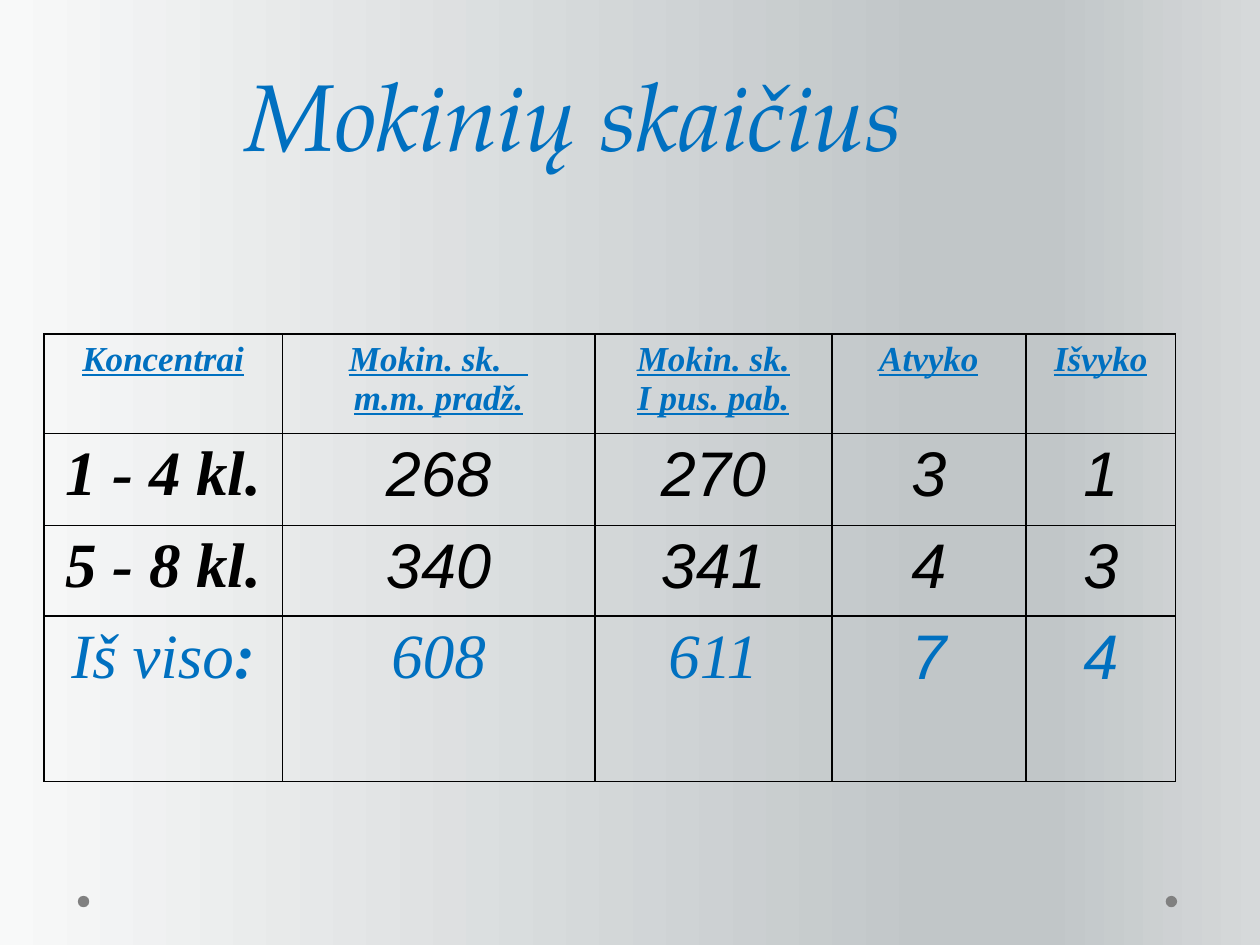
from copy import deepcopy
from dataclasses import dataclass

from lxml import etree
from pptx import Presentation
from pptx.dml.color import RGBColor
from pptx.enum import shapes, text
from pptx.oxml import ns
from pptx.util import Cm, Pt

BLUE = RGBColor(0x00, 0x70, 0xC0)
BLACK = RGBColor(0x00, 0x00, 0x00)
GREY = RGBColor(0x80, 0x80, 0x80)
BACKGROUND_STOPS = [
    (0, RGBColor(0xF8, 0xF9, 0xF9)),
    (0.74, RGBColor(0xC1, 0xC6, 0xC8)),
    (0.83, RGBColor(0xC1, 0xC6, 0xC8)),
    (1, RGBColor(0xD6, 0xD9, 0xDA)),
]
SERIF, SANS, TITLE_FONT = "Times New Roman", "Arial", "TeX Gyre Pagella"


@dataclass(frozen=True)
class Style:
    size: int
    font: str
    color: RGBColor
    bold: bool = False
    underline: bool = False


HEADING = Style(20, SERIF, BLUE, bold=True, underline=True)
GRADES = Style(36, SERIF, BLACK, bold=True)
COUNT = Style(36, SANS, BLACK)
TOTAL = Style(36, SERIF, BLUE)
TOTAL_COLON = Style(36, SERIF, BLUE, bold=True)
TOTAL_MOVES = Style(36, SANS, BLUE)

COLUMN_WIDTHS = [Cm(4.8), Cm(6.3), Cm(4.78), Cm(3.91), Cm(3.02)]
ROW_HEIGHTS = [Cm(2.01), Cm(1.85), Cm(1.83), Cm(3.33)]
COUNT_ROW_STYLES = [GRADES] + [COUNT] * 4
ROWS = [
    (["Koncentrai", "Mokin. sk.   \nm.m. pradž.", "Mokin. sk.\nI pus. pab.",
      "Atvyko", "Išvyko"], [HEADING] * 5),
    (["1 - 4 kl.", "268", "270", "3", "1"], COUNT_ROW_STYLES),
    (["5 - 8 kl.", "340", "341", "4", "3"], COUNT_ROW_STYLES),
    (["Iš viso", "608", "611", "7", "4"], [TOTAL] * 3 + [TOTAL_MOVES] * 2),
]


def add_run(paragraph, wording: str, *, style: Style) -> None:
    run = paragraph.add_run()
    run.text = wording
    run.font.size = Pt(style.size)
    run.font.name = style.font
    run.font.color.rgb = style.color
    run.font.bold = style.bold
    run.font.italic = True
    run.font.underline = style.underline


def write(frame, wording: str, *, style: Style, line_spacing=None) -> None:
    """Write centred paragraphs, one for each line of the wording."""
    for index, line in enumerate(wording.split("\n")):
        paragraph = frame.add_paragraph() if index else frame.paragraphs[0]
        paragraph.alignment = text.PP_ALIGN.CENTER
        if line_spacing is not None:
            paragraph.line_spacing = line_spacing
        add_run(paragraph, line, style=style)


def outline_cell(cell) -> None:
    """Give a cell thin black borders and no fill."""
    properties = cell._tc.get_or_add_tcPr()
    for side in ("a:lnL", "a:lnR", "a:lnT", "a:lnB"):
        border = etree.SubElement(properties, ns.qn(side), w=str(Pt(1)))
        fill = etree.SubElement(border, ns.qn("a:solidFill"))
        etree.SubElement(fill, ns.qn("a:srgbClr"), val=str(BLACK))
    cell.fill.background()


def paint_background(slide) -> None:
    fill = slide.background.fill
    fill.gradient()
    fill.gradient_angle = 0
    stop_list = slide.background._cSld.find(".//" + ns.qn("a:gsLst"))
    while len(stop_list) < len(BACKGROUND_STOPS):
        stop_list.append(deepcopy(stop_list[0]))
    for stop, (position, color) in zip(fill.gradient_stops, BACKGROUND_STOPS):
        stop.position = position
        stop.color.rgb = color


def add_dot(slide, left: Cm) -> None:
    dot = slide.shapes.add_shape(
        shapes.MSO_SHAPE.OVAL, left, Cm(18.06), Cm(0.23), Cm(0.23))
    dot.shadow.inherit = False
    dot.fill.solid()
    dot.fill.fore_color.rgb = GREY
    dot.line.fill.background()


def add_title(slide) -> None:
    title = slide.shapes.title
    title.left, title.top = Cm(1.09), Cm(-0.48)
    title.width, title.height = Cm(20.96), Cm(4.04)
    frame = title.text_frame
    frame.auto_size = text.MSO_AUTO_SIZE.NONE
    frame.vertical_anchor = text.MSO_ANCHOR.BOTTOM
    write(frame, "Mokinių skaičius", style=Style(54, TITLE_FONT, BLUE),
          line_spacing=Pt(58))


def add_pupil_table(slide) -> None:
    pupils = slide.shapes.add_table(
        len(ROWS), len(COLUMN_WIDTHS), Cm(0.89), Cm(6.73),
        sum(COLUMN_WIDTHS), sum(ROW_HEIGHTS)).table
    pupils.first_row = pupils.horz_banding = False
    for column, width in zip(pupils.columns, COLUMN_WIDTHS):
        column.width = width
    for row, height, (wordings, styles) in zip(pupils.rows, ROW_HEIGHTS, ROWS):
        row.height = height
        for cell, wording, style in zip(row.cells, wordings, styles):
            outline_cell(cell)
            write(cell.text_frame, wording, style=style)
    total_label = pupils.cell(len(ROWS) - 1, 0).text_frame.paragraphs[0]
    add_run(total_label, ":", style=TOTAL_COLON)


def main() -> None:
    presentation = Presentation()
    presentation.slide_width, presentation.slide_height = Cm(25.4), Cm(19.05)
    slide = presentation.slides.add_slide(presentation.slide_layouts[5])
    paint_background(slide)
    for left in (Cm(23.5), Cm(1.57)):
        add_dot(slide, left)
    add_title(slide)
    add_pupil_table(slide)
    presentation.save("out.pptx")


if __name__ == "__main__":
    main()
